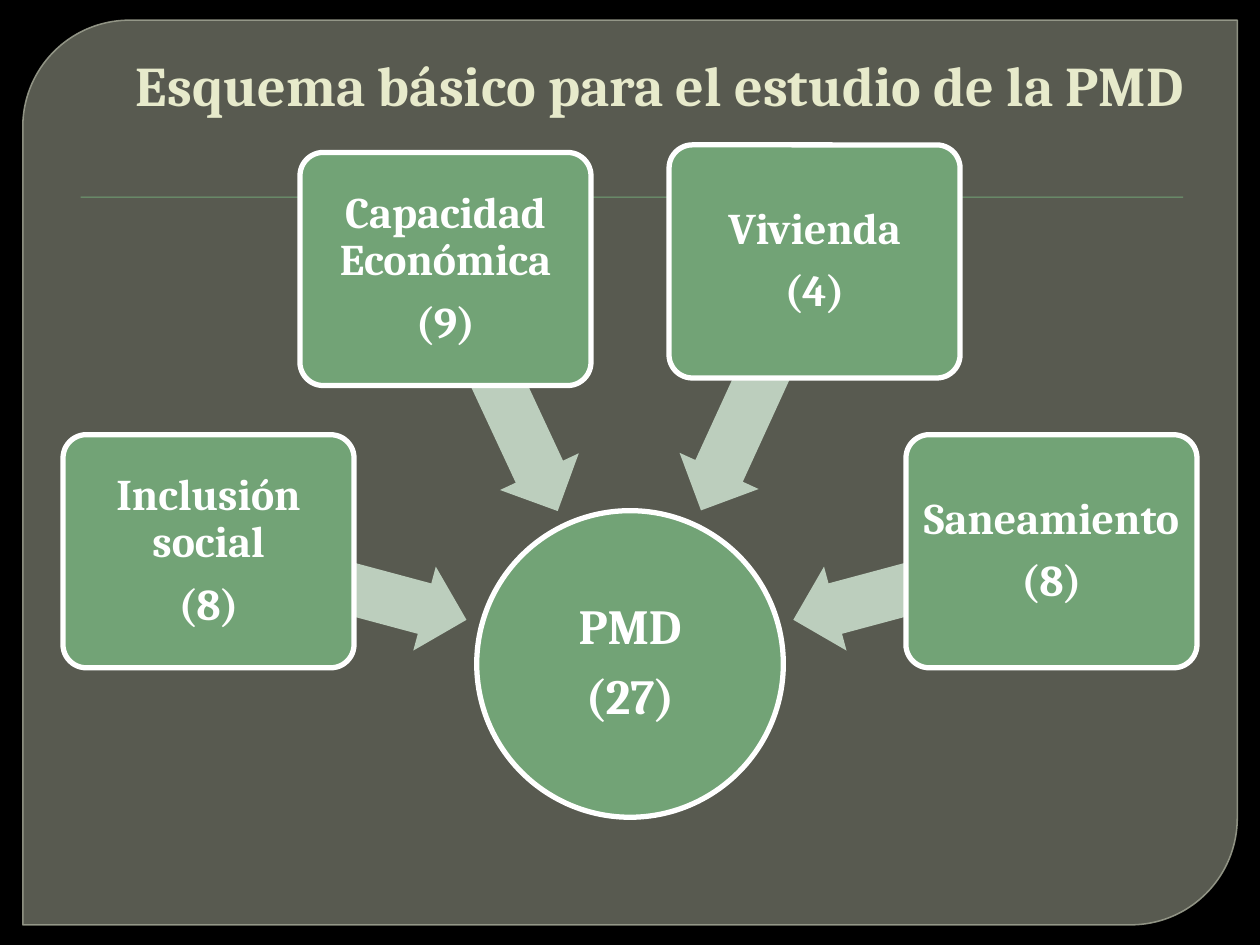
from lxml import etree
from pptx import Presentation
from pptx.dml.color import RGBColor
from pptx.enum.shapes import MSO_SHAPE as Shape
from pptx.enum.text import MSO_ANCHOR as Anchor, PP_ALIGN as Align
from pptx.oxml.ns import qn
from pptx.util import Pt

BLACK = RGBColor(0x00, 0x00, 0x00)
PANEL = RGBColor(0x88, 0x8B, 0x7B)
PANEL_EDGE = RGBColor(0x9D, 0xA0, 0x90)
GREEN = RGBColor(0x72, 0xA3, 0x76)
PALE_GREEN = RGBColor(0xBC, 0xCE, 0xBD)
CREAM = RGBColor(0xE7, 0xEA, 0xCB)
WHITE = RGBColor(0xFF, 0xFF, 0xFF)
FONT = "Cambria"

BOX_WIDTH, BOX_HEIGHT = 166.3, 133.2
ARROW_HEIGHT = 49.7
# Label, count, box left and top, then arrow left, top, width and rotation
FACTORS = [
    ("Inclusión social", 8, 36, 248.4, 116.6, 309.6, 152.6, 195),
    ("Capacidad Económica", 9, 171.4, 87.1, 210.2, 198, 152.6, 245),
    ("Vivienda", 4, 382.3, 82.8, 355, 195.8, 156.2, 294.6),
    ("Saneamiento", 8, 517.7, 248.4, 450.7, 309.6, 152.6, 345),
]


def set_opacity(fill, percent):
    """Make a solid fill partly transparent."""
    color = fill._xPr.find(qn("a:solidFill"))[0]
    etree.SubElement(color, qn("a:alpha")).set("val", str(percent * 1000))


def add_figure(slide, kind, left, top, width, height, color,
               line=None, line_width=3, adjustments=()):
    shape = slide.shapes.add_shape(
        kind, Pt(left), Pt(top), Pt(width), Pt(height))
    shape.shadow.inherit = False
    shape.fill.solid()
    shape.fill.fore_color.rgb = color
    if line is None:
        shape.line.fill.background()
    else:
        shape.line.color.rgb = line
        shape.line.width = Pt(line_width)
    for index, value in enumerate(adjustments):
        shape.adjustments[index] = value
    return shape


def format_text(text_frame, size, color, alignment):
    text_frame.word_wrap = True
    for paragraph in text_frame.paragraphs:
        paragraph.alignment = alignment
        for run in paragraph.runs:
            run.font.name = FONT
            run.font.size = Pt(size)
            run.font.bold = True
            run.font.color.rgb = color


def add_label(shape, label, count, size):
    text_frame = shape.text_frame
    text_frame.margin_left = text_frame.margin_right = 0
    text_frame.margin_top = text_frame.margin_bottom = Pt(2)
    text_frame.vertical_anchor = Anchor.MIDDLE
    text_frame.text = f"{label}\n({count})"
    format_text(text_frame, size, WHITE, Align.CENTER)
    for paragraph in text_frame.paragraphs:
        paragraph.line_spacing = 0.9
        paragraph.space_after = Pt(round(size * 0.35, 2))


def add_background(slide):
    slide.background.fill.solid()
    slide.background.fill.fore_color.rgb = BLACK
    panel = add_figure(slide, Shape.ROUND_2_DIAG_RECTANGLE, 13, 11.5, 694, 517,
                       PANEL, PANEL_EDGE, 0.87, (0.118, 0))
    set_opacity(panel.fill, 65)
    set_opacity(panel.line.fill, 88)
    add_figure(slide, Shape.RECTANGLE, 46.1, 112.3, 630, 0.72, GREEN)


def add_title(slide, text):
    title = slide.shapes.add_textbox(Pt(36), Pt(9.4), Pt(648), Pt(61.2))
    title.text_frame.text = text
    title.text_frame.vertical_anchor = Anchor.BOTTOM
    format_text(title.text_frame, 32, CREAM, Align.RIGHT)


def add_factor(slide, label, count, left, top,
               arrow_left, arrow_top, arrow_width, rotation):
    arrow = add_figure(slide, Shape.LEFT_ARROW, arrow_left, arrow_top,
                       arrow_width, ARROW_HEIGHT, PALE_GREEN,
                       adjustments=(0.6, 0.5))
    arrow.rotation = rotation
    box = add_figure(slide, Shape.ROUNDED_RECTANGLE, left, top, BOX_WIDTH,
                     BOX_HEIGHT, GREEN, WHITE, adjustments=(0.1,))
    add_label(box, label, count, 25)


def main():
    presentation = Presentation()
    presentation.slide_width, presentation.slide_height = Pt(720), Pt(540)
    slide = presentation.slides.add_slide(presentation.slide_layouts[6])

    add_background(slide)
    add_title(slide, "Esquema básico para el estudio de la PMD")

    # Central total
    circle = add_figure(slide, Shape.OVAL, 272.4, 291.8, 175.2, 175.2,
                        GREEN, WHITE)
    add_label(circle, "PMD", sum(factor[1] for factor in FACTORS) - 2, 28)

    # Factors pointing at the total
    for factor in FACTORS:
        add_factor(slide, *factor)

    presentation.save("out.pptx")


if __name__ == "__main__":
    main()
